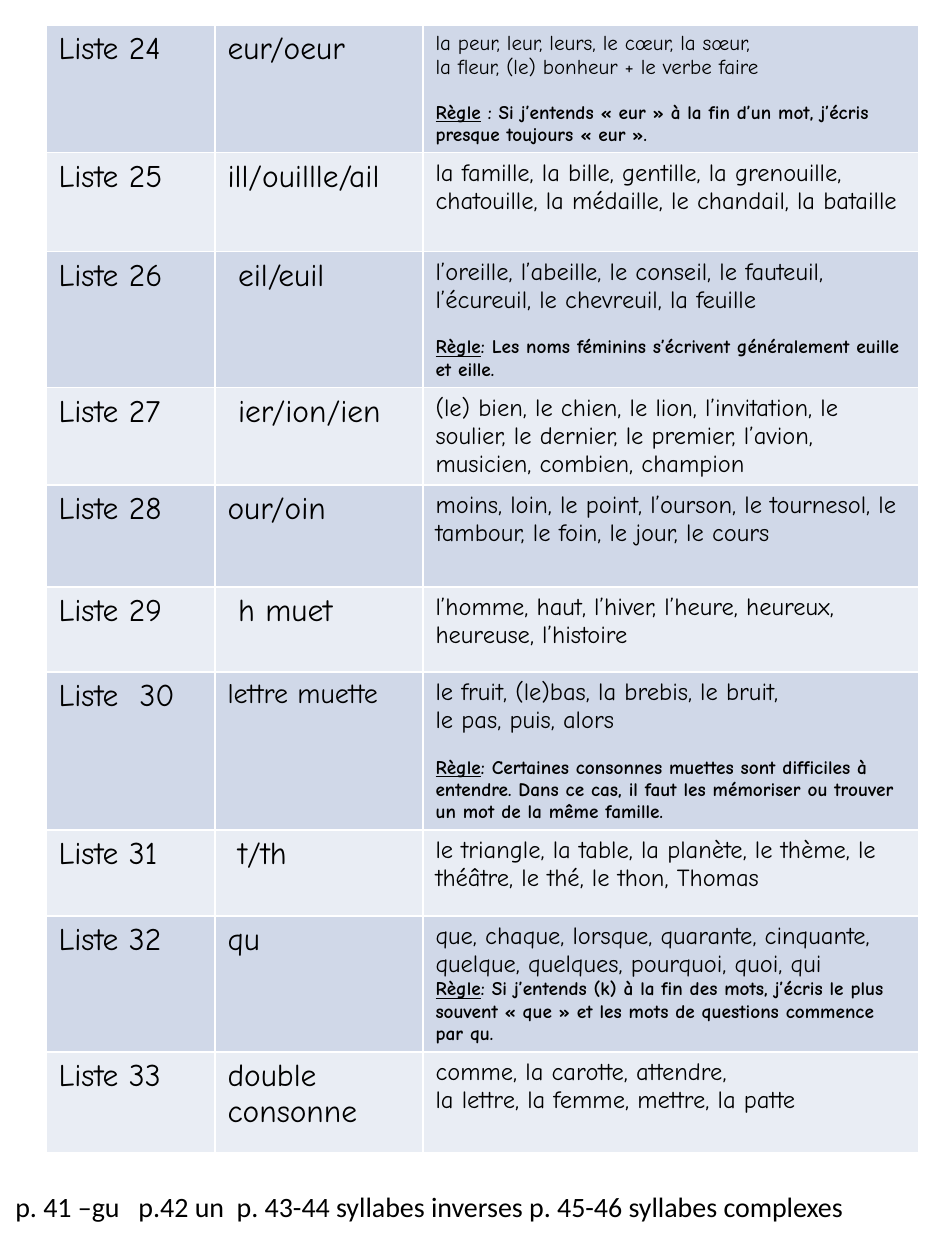
from lxml.etree import SubElement
from pptx import Presentation
from pptx.dml.color import RGBColor
from pptx.enum.text import MSO_AUTO_SIZE
from pptx.oxml.ns import qn
from pptx.util import Emu, Pt

PX = 914400 / 126
COLORS = {"dark": "D0D8E8", "light": "E9EDF4", "border": "FFFFFF", "text": "000000"}
LIST_FONT, NOTE_FONT = "Comic Neue", "Calibri"
COLUMNS = [169, 208, 496]
RULE_GAP = 12.7  # points, one line of rule text

# Each row: height, list name, sound, lines of words, rule after "Règle"
ROWS = [
    (127, "Liste 24", "eur/oeur",
     ["la peur, leur, leurs, le cœur, la sœur,", "la fleur, (le) bonheur + le verbe faire"],
     " : Si j’entends « eur » à la fin d’un mot, j’écris presque toujours « eur »."),
    (99, "Liste 25", "ill/ouillle/ail",
     ["la famille, la bille, gentille, la grenouille, chatouille, la médaille, "
      "le chandail, la bataille"], None),
    (136, "Liste 26", " eil/euil",
     ["l’oreille, l’abeille, le conseil, le fauteuil, l’écureuil, le chevreuil, la feuille"],
     ": Les noms féminins s’écrivent généralement euille et eille."),
    (97, "Liste 27", " ier/ion/ien",
     ["(le) bien, le chien, le lion, l’invitation, le soulier, le dernier, le premier, "
      "l’avion, musicien, combien, champion"], None),
    (102, "Liste 28", "our/oin",
     ["moins, loin, le point, l’ourson, le tournesol, le tambour, le foin, le jour, "
      "le cours"], None),
    (85, "Liste 29", " h muet",
     ["l’homme, haut, l’hiver, l’heure, heureux, heureuse, l’histoire"], None),
    (158, "Liste  30", "lettre muette",
     ["le fruit, (le)bas, la brebis, le bruit,", "le pas, puis, alors"],
     ": Certaines consonnes muettes sont difficiles à entendre. Dans ce cas, il faut "
     "les mémoriser ou trouver un mot de la même famille."),
    (86, "Liste 31", " t/th",
     ["le triangle, la table, la planète, le thème, le théâtre, le thé, le thon, Thomas"],
     None),
    (136, "Liste 32", "qu",
     ["que, chaque, lorsque, quarante, cinquante, quelque, quelques, pourquoi, quoi, qui"],
     ": Si j’entends (k) à la fin des mots, j’écris le plus souvent « que » et les mots "
     "de questions commence par qu."),
    (101, "Liste 33", "double consonne",
     ["comme, la carotte, attendre,", "la lettre, la femme, mettre, la patte"], None),
]
WORD_SIZES = {"Liste 24": 12}
SOUND_SIZES = {"lettre muette": 16}
TIGHT_RULES = {"Liste 32"}


def px(n):
    return Emu(round(n * PX))


def add_run(p, text, size, font=LIST_FONT, bold=False, underline=False):
    r = p.add_run()
    r.text = text
    r.font.size = Pt(size)
    r.font.name = font
    r.font.bold = bold
    r.font.underline = underline
    r.font.color.rgb = RGBColor.from_string(COLORS["text"])


def style_cell(cell, fill):
    tcPr = cell._tc.get_or_add_tcPr()
    for side in ("lnL", "lnR", "lnT", "lnB"):
        ln = SubElement(tcPr, qn(f"a:{side}"), w=str(Pt(1)))
        SubElement(SubElement(ln, qn("a:solidFill")), qn("a:srgbClr"), val=COLORS["border"])
    cell.fill.solid()
    cell.fill.fore_color.rgb = RGBColor.from_string(COLORS[fill])


def fill_words(tf, name, lines, rule):
    for i, line in enumerate(lines):
        p = tf.add_paragraph() if i else tf.paragraphs[0]
        add_run(p, line, WORD_SIZES.get(name, 14))
    if rule:
        p = tf.add_paragraph()
        p.space_before = Pt(0 if name in TIGHT_RULES else RULE_GAP)
        add_run(p, "Règle", 11, bold=True, underline=True)
        add_run(p, rule, 11, bold=True)


def add_word_lists(s, x, y, w, h):
    table = s.shapes.add_table(len(ROWS), len(COLUMNS), px(x), px(y), px(w), px(h)).table
    table.first_row = table.horz_banding = False
    for column, width in zip(table.columns, COLUMNS):
        column.width = px(width)
    for i, (height, name, sound, lines, rule) in enumerate(ROWS):
        table.rows[i].height = px(height)
        cells = list(table.rows[i].cells)
        for cell in cells:
            style_cell(cell, "light" if i % 2 else "dark")
        add_run(cells[0].text_frame.paragraphs[0], name, 18)
        add_run(cells[1].text_frame.paragraphs[0], sound, SOUND_SIZES.get(sound, 18))
        fill_words(cells[2].text_frame, name, lines, rule)


def add_page_note(s, x, y, w, h):
    tf = s.shapes.add_textbox(px(x), px(y), px(w), px(h)).text_frame
    tf.word_wrap = False
    tf.auto_size = MSO_AUTO_SIZE.SHAPE_TO_FIT_TEXT
    add_run(tf.paragraphs[0],
            "p. 41 –gu   p.42 un  p. 43-44 syllabes inverses p. 45-46 syllabes complexes",
            16, NOTE_FONT)


def main():
    prs = Presentation()
    prs.slide_width, prs.slide_height = px(945), px(1260)
    s = prs.slides.add_slide(prs.slide_layouts[6])
    # Table of word lists
    add_word_lists(s, 46, 25, sum(COLUMNS), sum(row[0] for row in ROWS))
    # Page references below the table
    add_page_note(s, 3, 1183, 869, 47)
    prs.save("out.pptx")


if __name__ == "__main__":
    main()
